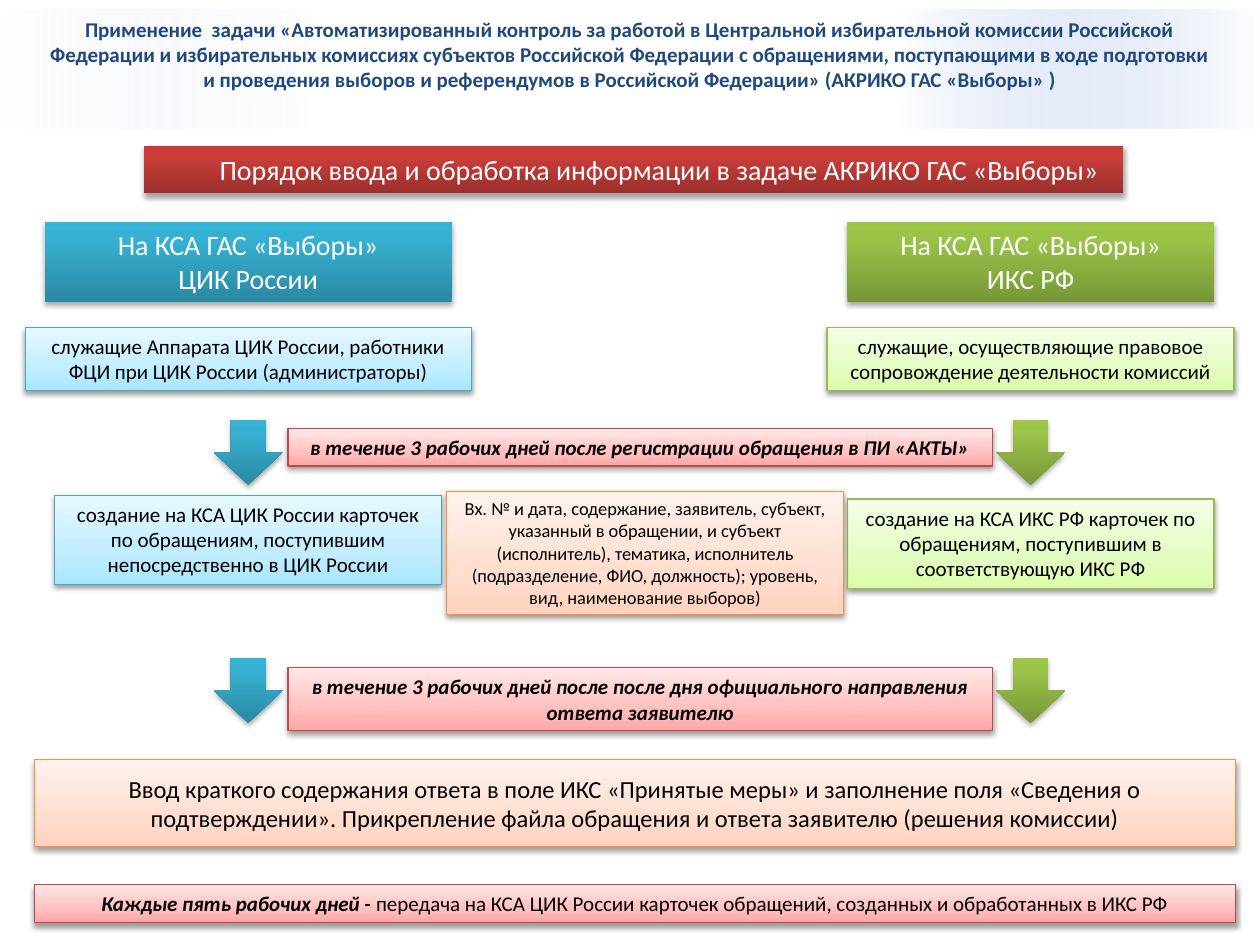
from dataclasses import dataclass

from lxml import etree
from pptx import Presentation
from pptx.dml.color import RGBColor
from pptx.enum.shapes import MSO_SHAPE
from pptx.enum.text import MSO_ANCHOR, MSO_AUTO_SIZE, PP_ALIGN
from pptx.oxml.ns import qn
from pptx.util import Inches, Pt

RECTANGLE, ARROW = MSO_SHAPE.RECTANGLE, MSO_SHAPE.DOWN_ARROW
TOP, MIDDLE = MSO_ANCHOR.TOP, MSO_ANCHOR.MIDDLE
LEFT, CENTER = PP_ALIGN.LEFT, PP_ALIGN.CENTER
NO_FIT = MSO_AUTO_SIZE.NONE


@dataclass(frozen=True)
class Style:
    stops: tuple
    text: str = "000000"
    line: str = ""
    shadow: tuple = (38, 3.15, 1.57)
    angle: int = 90


def strong(*colors):
    return Style(tuple(zip((0, 80, 100), colors)), "FFFFFF", shadow=(35, 3.15, 1.81))


def pale(line, *colors):
    return Style(tuple(zip((0, 35, 100), colors)), line=line)


class Theme:
    font = "Calibri"
    title_color = "1F497D"
    detail, body, answer, heading = 10.5, 12, 14, 16
    styles = {
        "band": Style(((0, "9AB5E4", 0), (29, "FFFFFF"), (75, "FFFFFF", 82), (100, "E1E8F5", 0)),
                      shadow=(), angle=180),
        "red": strong("9C2F2D", "CB3E3A", "CE3B37"),
        "blue": strong("2A88A2", "37B1D2", "34B4D6"),
        "green": strong("779737", "9BC348", "9DC746"),
        "pale blue": pale("46AAC5", "A7E6FF", "C1EDFF", "E7F8FF"),
        "pale green": pale("98B955", "DAFDA7", "E4FCC2", "F5FFE7"),
        "pale red": pale("BF4C48", "FFA6A5", "FFC0BF", "FFE7E7"),
        "pale orange": pale("F69240", "FFD2BD", "FFDED0", "FFF2ED"),
    }


PLAIN = {"bold": False, "italic": False}
STRESS = {"bold": True, "italic": True}

TITLE = (
    "Применение  задачи «Автоматизированный контроль за работой в Центральной избирательной "
    "комиссии Российской Федерации и избирательных комиссиях субъектов Российской Федерации "
    "с обращениями, поступающими в ходе подготовки и проведения выборов и референдумов "
    "в Российской Федерации» (АКРИКО ГАС «Выборы» )"
)
BANNER = "Порядок ввода и обработка информации в задаче АКРИКО ГАС «Выборы»"

LANES = {"commission": 1.97, "region": 8.18, "card": 5.12, "deadline": 5.08, "banner": 5.03, "full": 5.04}
ROWS = {
    "band": (0.08, 0.94), "title": (0.08, 0.71), "banner": (1.16, 0.37), "heads": (1.76, 0.64),
    "people": (2.6, 0.5), "first arrows": (3.33, 0.52), "first deadline": (3.4, 0.3),
    "card": (3.9, 0.98), "commission cards": (3.93, 0.71), "region cards": (3.96, 0.71),
    "second arrows": (5.22, 0.52), "second deadline": (5.3, 0.5), "answer": (6.03, 0.69),
    "transfer": (7.02, 0.3),
}
ARROW_WIDTH = 0.55

BOXES = [
    ("commission", "heads", 3.23, "blue", Theme.heading, [[("На КСА ГАС «Выборы»", PLAIN)], [("ЦИК России", PLAIN)]]),
    ("region", "heads", 2.91, "green", Theme.heading, [[("На КСА ГАС «Выборы»", PLAIN)], [("ИКС РФ", PLAIN)]]),
    ("commission", "commission cards", 3.07, "pale blue", Theme.body, [[
        ("создание на КСА ЦИК России карточек по обращениям, поступившим непосредственно в ЦИК России", PLAIN)]]),
    ("region", "region cards", 2.91, "pale green", Theme.body, [[
        ("создание на КСА ИКС РФ карточек по обращениям, поступившим в соответствующую ИКС РФ", PLAIN)]]),
    ("commission", "people", 3.54, "pale blue", Theme.body, [[
        ("служащие Аппарата ЦИК России, работники ФЦИ при ЦИК России (администраторы)", PLAIN)]]),
    ("region", "people", 3.23, "pale green", Theme.body, [[
        ("служащие, осуществляющие правовое сопровождение деятельности комиссий", PLAIN)]]),
    ("deadline", "first deadline", 5.59, "pale red", Theme.body, [[
        ("в течение 3 рабочих дней после регистрации обращения в ПИ «АКТЫ»", STRESS)]]),
    ("deadline", "second deadline", 5.59, "pale red", Theme.body, [[
        ("в течение 3 рабочих дней после после дня официального направления ответа заявителю", STRESS)]]),
    ("full", "transfer", 9.53, "pale red", Theme.body, [[
        ("Каждые пять рабочих дней - ", STRESS),
        ("передача на КСА ЦИК России карточек обращений, созданных и обработанных в ИКС РФ", PLAIN)]]),
    ("full", "answer", 9.53, "pale orange", Theme.answer, [[
        ("Ввод краткого содержания ответа в поле ИКС «Принятые меры» и заполнение поля «Сведения "
         "о подтверждении». Прикрепление файла обращения и ответа заявителю (решения комиссии)", PLAIN)]]),
    ("card", "card", 3.15, "pale orange", Theme.detail, [[
        ("Вх. № и дата, содержание, заявитель, субъект, указанный в обращении, и субъект "
         "(исполнитель), тематика, исполнитель (подразделение, ФИО, должность); уровень, "
         "вид, наименование выборов)", PLAIN)]]),
]


def set_values(target, values):
    for name, value in values.items():
        setattr(target, name, value)


def place(lane_center, row, width):
    top, height = ROWS[row]
    return [Inches(value) for value in (lane_center - width / 2, top, width, height)]


def add_color(parent, color, opacity):
    element = etree.SubElement(parent, qn("a:srgbClr"), val=color)
    if opacity < 100:
        etree.SubElement(element, qn("a:alpha"), val=str(opacity * 1000))


def apply_style(shape, style):
    shape.fill.gradient()
    shape.fill.gradient_angle = style.angle
    stop_list = shape._element.spPr.find(".//" + qn("a:gsLst"))
    for stop in list(stop_list):
        stop_list.remove(stop)
    for position, color, *opacity in style.stops:
        stop = etree.SubElement(stop_list, qn("a:gs"), pos=str(position * 1000))
        add_color(stop, color, opacity[0] if opacity else 100)
    if style.line:
        shape.line.color.rgb = RGBColor.from_string(style.line)
        shape.line.width = Pt(0.75)
    else:
        shape.line.fill.background()
    shape.shadow.inherit = False
    if style.shadow:
        opacity, blur, distance = style.shadow
        effects = shape._element.spPr.find(qn("a:effectLst"))
        shadow = etree.SubElement(effects, qn("a:outerShdw"), blurRad=str(Pt(blur)),
                                  dist=str(Pt(distance)), dir="5400000", rotWithShape="0")
        add_color(shadow, "000000", opacity)


def write(shape, paragraphs, size, color, anchor=TOP, alignment=CENTER, wrap=True):
    frame = shape.text_frame
    set_values(frame, {"word_wrap": wrap, "auto_size": NO_FIT, "vertical_anchor": anchor})
    for index, runs in enumerate(paragraphs):
        paragraph = frame.add_paragraph() if index else frame.paragraphs[0]
        paragraph.alignment = alignment
        for text, emphasis in runs:
            run = paragraph.add_run()
            run.text = text
            set_values(run.font, {"name": Theme.font, "size": Pt(size), **emphasis})
            run.font.color.rgb = RGBColor.from_string(color)


def add_block(slide, kind, position, style_name):
    shape = slide.shapes.add_shape(kind, *position)
    apply_style(shape, Theme.styles[style_name])
    return shape


def main():
    presentation = Presentation()
    set_values(presentation, {"slide_width": Inches(10), "slide_height": Inches(7.5)})
    slide = presentation.slides.add_slide(presentation.slide_layouts[5])

    title = slide.shapes.title
    band = add_block(slide, RECTANGLE, place(5, "band", 10), "band")
    title._element.addprevious(band._element)
    set_values(title, dict(zip(("left", "top", "width", "height"), place(5, "title", 9.45))))
    write(title, [[(TITLE, {"bold": True})]], Theme.body, Theme.title_color)

    banner = add_block(slide, RECTANGLE, place(LANES["banner"], "banner", 7.77), "red")
    write(banner, [[(BANNER, PLAIN)]], Theme.heading, Theme.styles["red"].text, MIDDLE, LEFT, False)
    banner.text_frame.paragraphs[0]._p.get_or_add_pPr().set("indent", str(Inches(0.5)))

    for row in ("first arrows", "second arrows"):
        for lane, style_name in (("commission", "blue"), ("region", "green")):
            add_block(slide, ARROW, place(LANES[lane], row, ARROW_WIDTH), style_name)

    for lane, row, width, style_name, size, paragraphs in BOXES:
        box = add_block(slide, RECTANGLE, place(LANES[lane], row, width), style_name)
        anchor = MIDDLE if row == "answer" else TOP
        write(box, paragraphs, size, Theme.styles[style_name].text, anchor)

    presentation.save("out.pptx")


if __name__ == "__main__":
    main()
